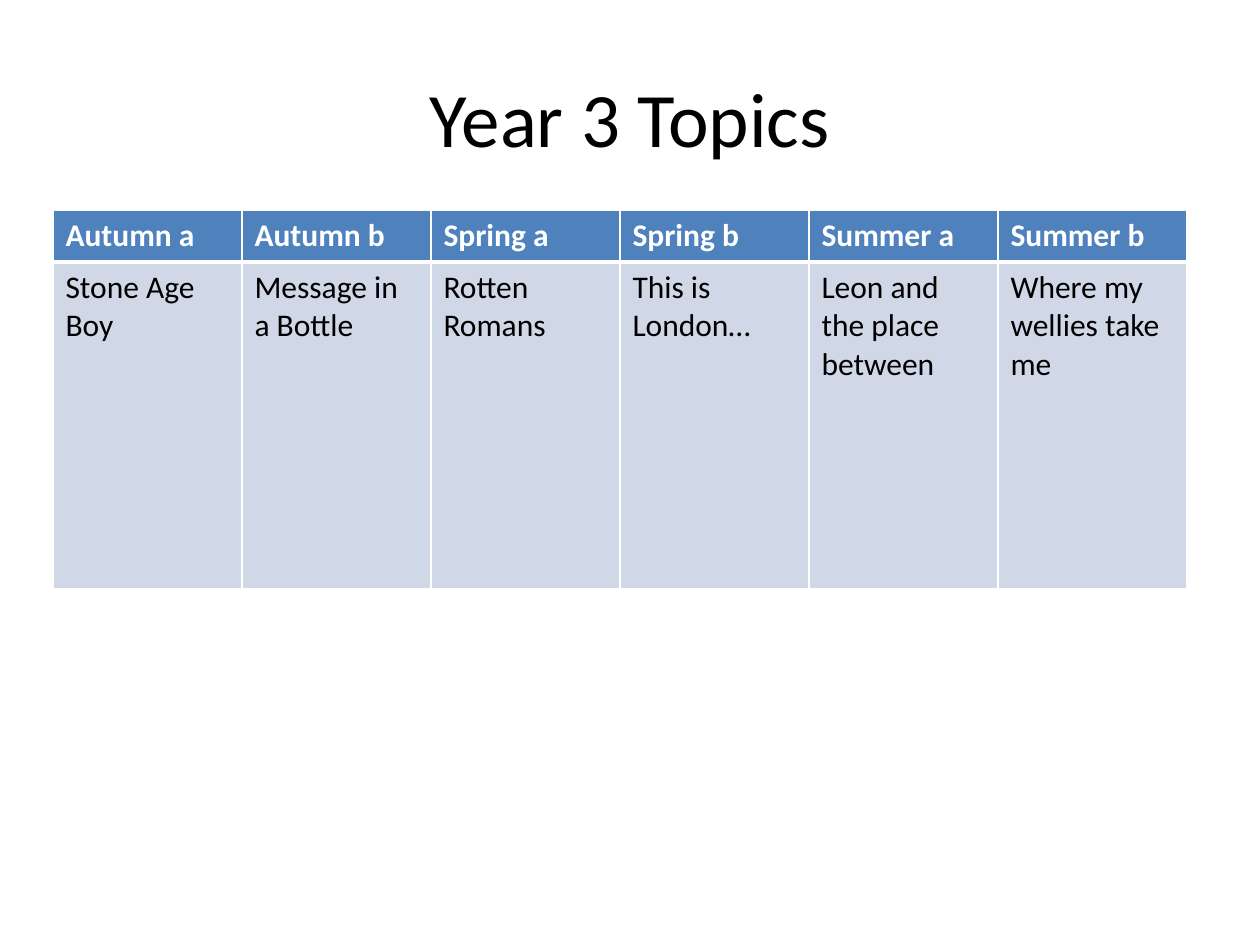
from lxml.etree import SubElement
from pptx import Presentation
from pptx.dml.color import RGBColor
from pptx.enum.text import MSO_ANCHOR, PP_ALIGN
from pptx.oxml.ns import qn
from pptx.util import Inches, Pt

TOPICS = {
    "Autumn a": "Stone Age Boy",
    "Autumn b": "Message in a Bottle",
    "Spring a": "Rotten Romans",
    "Spring b": "This is London…",
    "Summer a": "Leon and the place between",
    "Summer b": "Where my wellies take me",
}
TITLE_FORMAT = {"size": Pt(44)}
HEADER_FORMAT = {"size": Pt(18), "bold": True}
BODY_FORMAT = {"size": Pt(18), "bold": False}


def color(hex_value):
    return RGBColor.from_string(hex_value)


class SlideBuilder:
    font_name = "Calibri"
    border_color = "FFFFFF"

    def __init__(self, slide):
        self.slide = slide

    def set_text(self, paragraph, text, text_color, font_format):
        paragraph.text = text
        font = paragraph.runs[0].font
        for name, value in {"name": self.font_name, **font_format}.items():
            setattr(font, name, value)
        font.color.rgb = color(text_color)

    def add_title(self, text, left, top, width, height):
        shape = self.slide.shapes.add_textbox(
            Inches(left), Inches(top), Inches(width), Inches(height))
        frame = shape.text_frame
        frame.word_wrap = True
        frame.vertical_anchor = MSO_ANCHOR.MIDDLE
        paragraph = frame.paragraphs[0]
        paragraph.alignment = PP_ALIGN.CENTER
        self.set_text(paragraph, text, "000000", TITLE_FORMAT)

    def add_borders(self, cell, widths):
        """Draw the cell's sides; widths maps L, R, T, B to points."""
        properties = cell._tc.get_or_add_tcPr()
        for side, width in widths.items():
            line = SubElement(properties, qn(f"a:ln{side}"), w=str(Pt(width)))
            fill = SubElement(line, qn("a:solidFill"))
            SubElement(fill, qn("a:srgbClr"), val=self.border_color)

    def add_topic_table(self, topics, left, top, column_width, row_heights):
        row_styles = [
            (topics.keys(), "4F81BD", "FFFFFF", HEADER_FORMAT,
             {"L": 1, "R": 1, "T": 1, "B": 3}),
            (topics.values(), "D0D8E8", "000000", BODY_FORMAT,
             {"L": 1, "R": 1, "T": 3, "B": 1}),
        ]
        table = self.slide.shapes.add_table(
            len(row_styles), len(topics), Inches(left), Inches(top),
            Inches(column_width * len(topics)), Inches(sum(row_heights))).table
        for column in table.columns:
            column.width = Inches(column_width)
        for row, height, style in zip(table.rows, row_heights, row_styles):
            row.height = Inches(height)
            texts, fill_color, text_color, font_format, borders = style
            for cell, text in zip(row.cells, texts):
                self.add_borders(cell, borders)
                cell.fill.solid()
                cell.fill.fore_color.rgb = color(fill_color)
                self.set_text(cell.text_frame.paragraphs[0], text, text_color, font_format)


def main():
    presentation = Presentation()
    presentation.slide_width = Inches(10)
    presentation.slide_height = Inches(7.5)
    slide = presentation.slides.add_slide(presentation.slide_layouts[6])
    builder = SlideBuilder(slide)
    builder.add_title("Year 3 Topics", 0.5, 0.3, 9, 1.25)
    builder.add_topic_table(TOPICS, 0.42, 1.67, 1.5, [0.41, 2.59])
    presentation.save("out.pptx")


if __name__ == "__main__":
    main()
